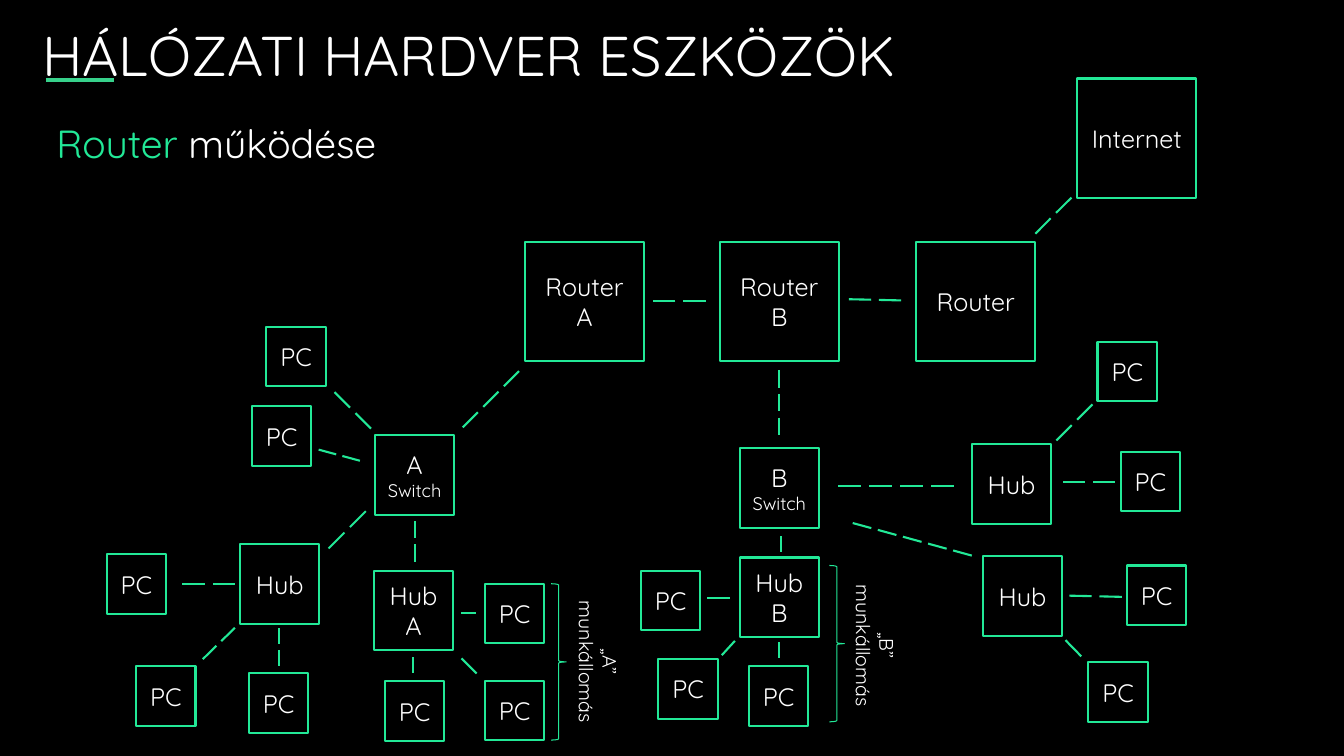
from lxml import etree
from pptx import Presentation
from pptx.dml.color import RGBColor
from pptx.enum.shapes import MSO_CONNECTOR, MSO_SHAPE
from pptx.enum.text import MSO_ANCHOR, PP_ALIGN
from pptx.oxml.ns import qn
from pptx.util import Cm, Pt

RECTANGLE = MSO_SHAPE.RECTANGLE
BRACE = MSO_SHAPE.RIGHT_BRACE
STRAIGHT = MSO_CONNECTOR.STRAIGHT
CENTER = PP_ALIGN.CENTER
MIDDLE = MSO_ANCHOR.MIDDLE

FONT = "Quicksand"
COLORS = {"background": "000000", "text": "FFFFFF", "green": "22E897", "underline": "37D18B"}
RGB = {name: RGBColor.from_string(value) for name, value in COLORS.items()}

presentation = Presentation()
presentation.slide_width = Cm(33.87)
presentation.slide_height = Cm(19.05)
slide = presentation.slides.add_slide(presentation.slide_layouts[6])
slide.background.fill.solid()
slide.background.fill.fore_color.rgb = RGB["background"]
shapes = slide.shapes


def add_text(left, top, width, height, text, size):
    """Add a text box and return it with its paragraph."""
    shape = shapes.add_textbox(Cm(left), Cm(top), Cm(width), Cm(height))
    shape.text_frame.word_wrap = True
    shape.text_frame.text = text
    paragraph = shape.text_frame.paragraphs[0]
    paragraph.font.name = FONT
    paragraph.font.size = Pt(size)
    paragraph.font.color.rgb = RGB["text"]
    return shape, paragraph


def add_line(x1, y1, x2, y2, color, width):
    line = shapes.add_connector(STRAIGHT, Cm(x1), Cm(y1), Cm(x2), Cm(y2))
    line.line.color.rgb = RGB[color]
    line.line.width = Pt(width)
    etree.SubElement(line._element.spPr, qn("a:effectLst"))


# Title, underline and subtitle
title, _ = add_text(0.81, -1.27, 32.41, 5.28, "HÁLÓZATI HARDVER ESZKÖZÖK", 40)
title.text_frame.vertical_anchor = MIDDLE
add_line(1.17, 2.01, 2.87, 2.01, "underline", 3)
_, subtitle = add_text(1.17, 2.87, 11.05, 1.45, "Router ", 28)
subtitle.runs[0].font.color.rgb = RGB["green"]
subtitle.add_run().text = "működése"

# Devices, grouped by the side of their square
devices = {
    3: [
        ("Internet", 27.15, 1.98), ("Router", 23.09, 6.1),
        ("Router\nB", 18.14, 6.1), ("Router\nA", 13.23, 6.1),
    ],
    2: [
        ("B\nSwitch", 18.64, 11.3), ("Hub", 24.49, 11.2),
        ("Hub\nB", 18.64, 14.05), ("Hub", 24.77, 14.02),
        ("A\nSwitch", 9.45, 10.97), ("Hub", 6.05, 13.72),
        ("Hub\nA", 9.42, 14.38),
    ],
    1.5: [
        ("PC", left, top) for left, top in [
            (6.71, 8.23), (6.35, 10.24), (2.69, 13.97), (3.43, 16.79), (6.27, 16.97),
            (9.7, 17.17), (12.22, 14.71), (12.22, 17.15),
            (16.15, 14.38), (16.59, 16.61), (18.87, 16.79),
            (27.66, 8.61), (28.24, 11.38), (28.4, 14.25), (27.43, 16.69),
        ]
    ],
}
for side, group in devices.items():
    for label, left, top in group:
        device = shapes.add_shape(RECTANGLE, Cm(left), Cm(top), Cm(side), Cm(side))
        device.shadow.inherit = False
        device.fill.background()
        device.line.color.rgb = RGB["green"]
        device.line.width = Pt(1.5)
        device.text_frame.vertical_anchor = MIDDLE
        device.text_frame.text = label
        for paragraph in device.text_frame.paragraphs:
            paragraph.alignment = CENTER
            paragraph.font.name = FONT
            paragraph.font.size = Pt(13 if paragraph.text == "Switch" else 18)
            paragraph.font.color.rgb = RGB["text"]

# Dashed links: start, end, number of dashes
GAP = 0.35  # gap as a share of one dash
links = [
    # Routers and internet
    (27, 4.98, 26.09, 5.89, 2), (22.71, 7.57, 21.39, 7.54, 2),
    (17.78, 7.59, 16.46, 7.59, 2), (13.08, 9.35, 11.66, 10.77, 3),
    (19.63, 9.32, 19.63, 10.97, 3),
    # Switch A
    (9.35, 10.8, 8.43, 9.88, 2), (9.07, 11.61, 8.03, 11.33, 2),
    (9.22, 12.88, 8.28, 13.82, 2), (10.46, 13.13, 10.46, 14.15, 2),
    # Left hub
    (5.92, 14.71, 4.6, 14.71, 2), (5.92, 15.82, 5.11, 16.61, 2),
    (7.04, 15.82, 7.04, 16.79, 2),
    # Hub A
    (10.41, 16.56, 10.41, 16.97, 1), (12.01, 16.97, 11.63, 16.59, 1),
    (11.99, 15.44, 11.61, 15.44, 1),
    # Switch B
    (24.49, 14, 21.49, 13.18, 5), (24.03, 12.24, 21.11, 12.24, 4),
    (19.69, 13.51, 19.69, 13.92, 1),
    # Hub B
    (18.39, 15.06, 17.83, 15.06, 1), (18.52, 16.15, 18.19, 16.51, 1),
    (19.63, 16.18, 19.63, 16.59, 1),
    # Right hubs
    (27.53, 10.19, 26.62, 11.1, 2), (28.09, 12.14, 26.8, 12.14, 2),
    (28.27, 15.04, 26.95, 15.01, 2), (27.25, 16.54, 26.85, 16.13, 1),
]
for x1, y1, x2, y2, count in links:
    dash = 1 / (count + (count - 1) * GAP)
    for index in range(count):
        start = index * dash * (1 + GAP)
        end = start + dash
        add_line(x1 + (x2 - x1) * start, y1 + (y2 - y1) * start,
                 x1 + (x2 - x1) * end, y1 + (y2 - y1) * end, "green", 1.5)

# Workstation braces with rotated captions
workstations = [("A", 13.89, 14.71, 12.98, 15.95), ("B", 20.9, 14.25, 19.96, 15.54)]
for letter, brace_left, brace_top, text_left, text_top in workstations:
    brace = shapes.add_shape(BRACE, Cm(brace_left), Cm(brace_top), Cm(0.38), Cm(3.94))
    brace.shadow.inherit = False
    brace.fill.background()
    brace.line.color.rgb = RGB["green"]
    brace.line.width = Pt(0.75)
    caption, paragraph = add_text(text_left, text_top, 4.19, 1.45, f"„{letter}”\vmunkállomás", 14)
    caption.rotation = 90
    paragraph.alignment = CENTER

presentation.save("out.pptx")
